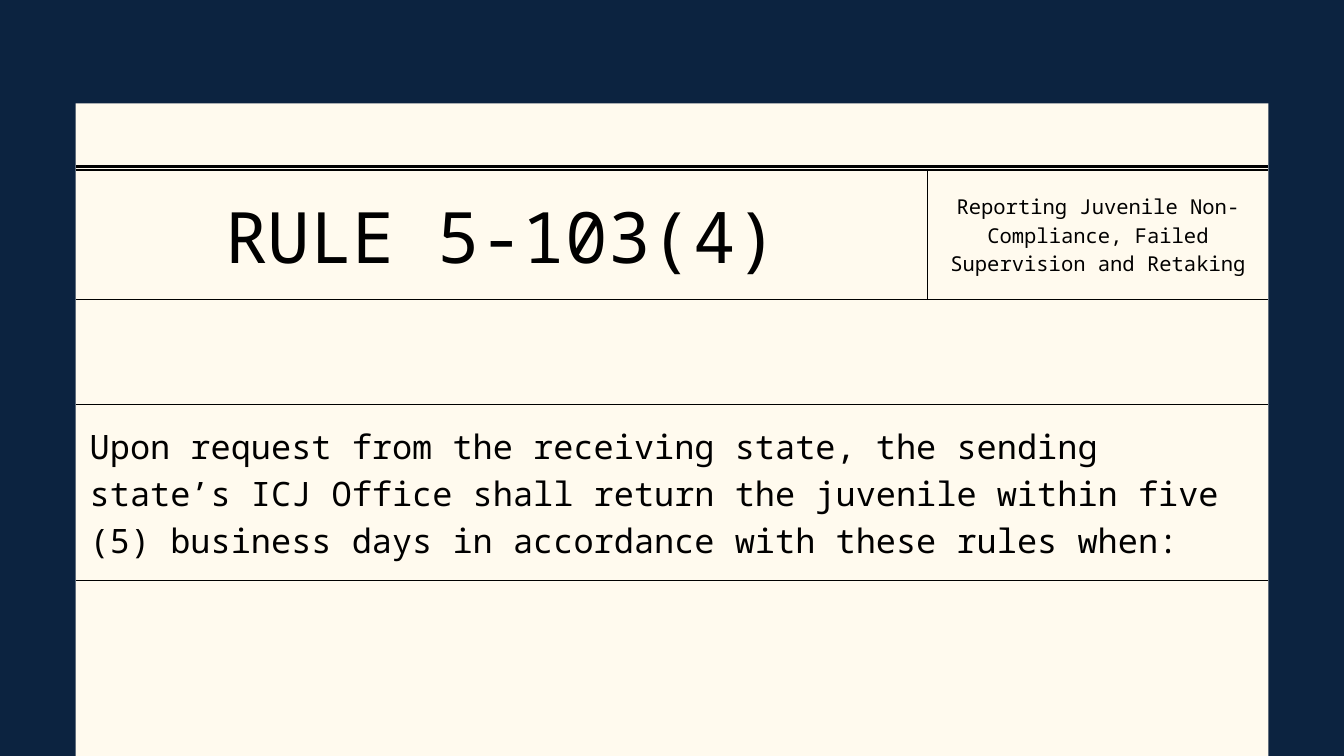
from dataclasses import dataclass

from lxml import etree
from pptx import Presentation
from pptx.dml.color import RGBColor
from pptx.enum.shapes import MSO_CONNECTOR, MSO_SHAPE
from pptx.enum.text import MSO_ANCHOR, PP_ALIGN
from pptx.oxml.ns import qn
from pptx.util import Cm, Pt

RECTANGLE = MSO_SHAPE.RECTANGLE
STRAIGHT = MSO_CONNECTOR.STRAIGHT
MIDDLE = MSO_ANCHOR.MIDDLE
LEFT, CENTER = PP_ALIGN.LEFT, PP_ALIGN.CENTER


@dataclass(frozen=True)
class Theme:
    navy: str = "0C2340"
    cream: str = "FFFAEE"
    ink: str = "000000"
    font: str = "Noto Sans Mono"
    rule_size: float = 76
    subject_size: float = 22
    body_size: float = 36
    line_factor: float = 1.4
    grid_width: float = 1.5
    heavy_width: float = 3.75
    cell_margin: float = 0.53


def write_text(frame, text, *, size, font, color, spacing, align=LEFT):
    paragraph = frame.paragraphs[0]
    paragraph.alignment = align
    paragraph.line_spacing = Pt(spacing)
    run = paragraph.add_run()
    run.text = text
    run.font.size = Pt(size)
    run.font.name = font
    run.font.color.rgb = RGBColor.from_string(color)


class RuleSlide:
    def __init__(self, slide, theme):
        self.slide = slide
        self.theme = theme
        background = slide.background.fill
        background.solid()
        background.fore_color.rgb = RGBColor.from_string(theme.navy)

    def panel(self, left, top, width, height):
        sheet = self.slide.shapes.add_shape(
            RECTANGLE, Cm(left), Cm(top), Cm(width), Cm(height))
        sheet.shadow.inherit = False
        sheet.fill.solid()
        sheet.fill.fore_color.rgb = RGBColor.from_string(self.theme.cream)
        sheet.line.fill.background()

    def heavy_line(self, left, top, width):
        divider = self.slide.shapes.add_connector(
            STRAIGHT, Cm(left), Cm(top), Cm(left + width), Cm(top))
        divider.line.width = Pt(self.theme.heavy_width)
        divider.line.color.rgb = RGBColor.from_string(self.theme.ink)
        etree.SubElement(divider._element.spPr, qn("a:effectLst"))

    def borders(self, cell, visible):
        properties = cell._tc.get_or_add_tcPr()
        for position, side in enumerate("LRTB"):
            edge = etree.Element(qn(f"a:ln{side}"))
            if side in visible:
                edge.set("w", str(Pt(self.theme.grid_width)))
                fill = etree.SubElement(edge, qn("a:solidFill"))
                etree.SubElement(fill, qn("a:srgbClr"), val=self.theme.ink)
            else:
                edge.set("w", "0")
                etree.SubElement(edge, qn("a:noFill"))
            properties.insert(position, edge)

    def text_row(self, left, top, height, entries):
        total = sum(width for width, *_ in entries)
        table = self.slide.shapes.add_table(
            1, len(entries), Cm(left), Cm(top), Cm(total), Cm(height)).table
        table.first_row = False
        table.horz_banding = False
        table.rows[0].height = Cm(height)
        last = len(entries) - 1
        for index, (width, text, size, align) in enumerate(entries):
            table.columns[index].width = Cm(width)
            cell = table.cell(0, index)
            cell.fill.background()
            cell.vertical_anchor = MIDDLE
            margin = Cm(self.theme.cell_margin)
            cell.margin_left = cell.margin_right = margin
            cell.margin_top = cell.margin_bottom = margin
            inner = ("L" if index > 0 else "") + ("R" if index < last else "")
            self.borders(cell, "TB" + inner)
            write_text(cell.text_frame, text, size=size, align=align,
                       font=self.theme.font, color=self.theme.ink,
                       spacing=size * self.theme.line_factor)


def main():
    theme = Theme()
    deck = Presentation()
    deck.slide_width, deck.slide_height = Cm(50.8), Cm(28.58)
    page = RuleSlide(deck.slides.add_slide(deck.slide_layouts[6]), theme)

    left, width, panel_top = 2.86, 45.08, 3.91
    rule_width = 32.2
    page.panel(left, panel_top, width, 28.58 - panel_top)
    page.heavy_line(left, 6.3, width)
    page.text_row(left, 6.43, 4.9, [
        (rule_width, "RULE 5-103(4)", theme.rule_size, CENTER),
        (width - rule_width,
         "Reporting Juvenile Non-Compliance, Failed Supervision and Retaking",
         theme.subject_size, CENTER),
    ])
    page.text_row(left, 15.29, 6.65, [
        (width,
         "Upon request from the receiving state, the sending state’s ICJ Office "
         "shall return the juvenile within five (5) business days in accordance "
         "with these rules when:",
         theme.body_size, LEFT),
    ])
    deck.save("out.pptx")


if __name__ == "__main__":
    main()
